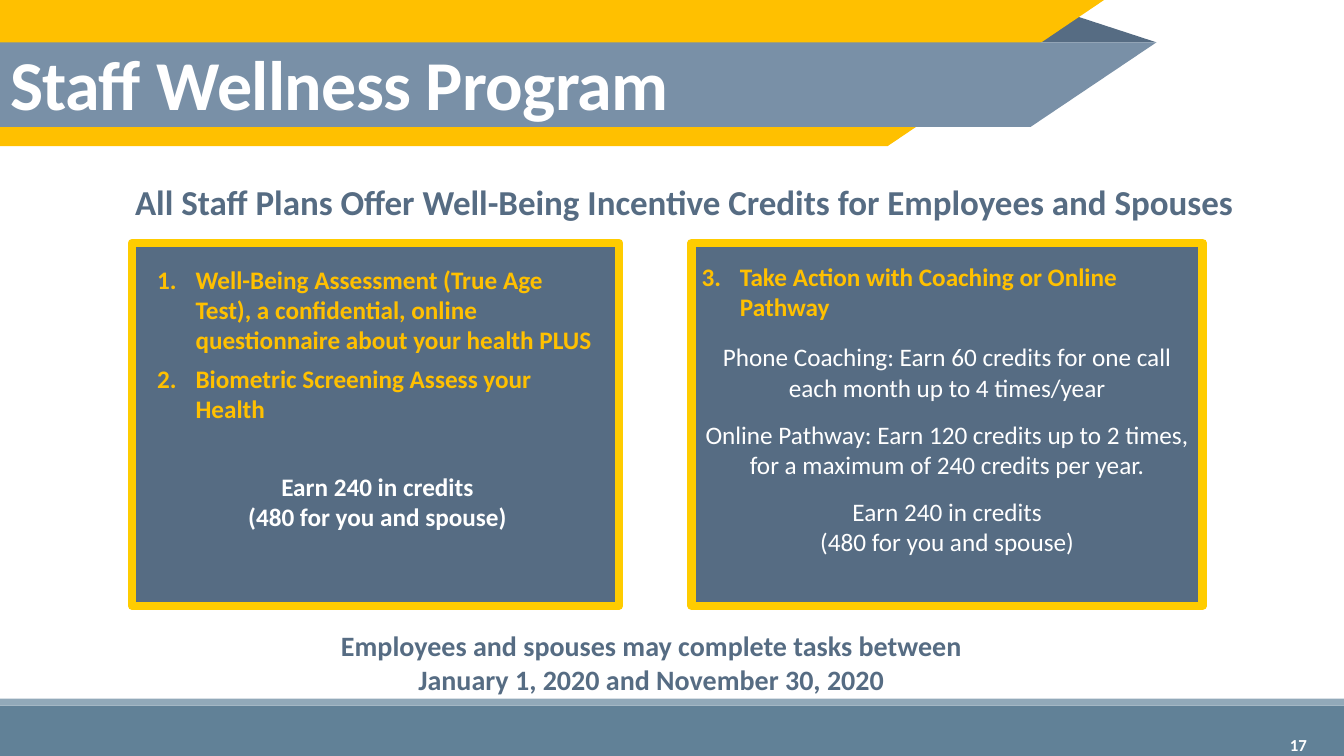
from lxml import etree
from pptx import Presentation
from pptx import util as u
from pptx.dml.color import RGBColor
from pptx.enum import shapes, text
from pptx.oxml import ns

GOLD = RGBColor(0xFF, 0xC0, 0x00)
BORDER = RGBColor(0xFF, 0xCC, 0x00)
NAVY = RGBColor(0x56, 0x6C, 0x83)
SLATE = RGBColor(0x79, 0x90, 0xA7)
FOOTER = RGBColor(0x61, 0x81, 0x97)
FOOTER_EDGE = RGBColor(0x92, 0xA9, 0xB9)
WHITE = RGBColor(0xFF, 0xFF, 0xFF)
LEFT, CENTER, RIGHT = text.PP_ALIGN.LEFT, text.PP_ALIGN.CENTER, text.PP_ALIGN.RIGHT

presentation = Presentation()
presentation.slide_width = u.Inches(13.33)
presentation.slide_height = u.Inches(7.5)
column = presentation.slide_width / 100
row = presentation.slide_height / 100
slide = presentation.slides.add_slide(presentation.slide_layouts[3])
title, left_list, right_panel = slide.placeholders


def place(shape, left, top, width, height):
    """Position a shape in percent of the slide's width and height."""
    shape.left, shape.width = int(left * column), int(width * column)
    shape.top, shape.height = int(top * row), int(height * row)


def write(frame, paragraphs, size, line_spacing=1.0):
    """Fill a frame from (text, colour, bold, alignment, space before, number)."""
    frame.word_wrap = True
    frame.auto_size = text.MSO_AUTO_SIZE.NONE
    frame.text = "\n".join(item[0] for item in paragraphs)
    for paragraph, item in zip(frame.paragraphs, paragraphs):
        _, color, bold, alignment, space, number = item
        properties = paragraph._p.get_or_add_pPr()
        indent = u.Inches(0.38) if number else 0
        properties.set("marL", str(indent))
        properties.set("indent", str(-indent))
        if number:
            bullet = etree.SubElement(properties, ns.qn("a:buAutoNum"), type="arabicPeriod")
            bullet.set("startAt", str(number))
        else:
            etree.SubElement(properties, ns.qn("a:buNone"))
        paragraph.alignment = alignment
        paragraph.line_spacing = line_spacing
        paragraph.space_before = u.Pt(space)
        paragraph.space_after = u.Pt(0)
        for run in paragraph.runs:
            run.font.name = "Calibri"
            run.font.size = u.Pt(size)
            run.font.bold = bold
            run.font.color.rgb = color


# Footer bars and the fold behind the banner
background = [
    (shapes.MSO_SHAPE.RECTANGLE, FOOTER, (0, 93.33, 100, 6.67)),
    (shapes.MSO_SHAPE.RECTANGLE, FOOTER_EDGE, (0, 92.4, 100, 0.93)),
    (shapes.MSO_SHAPE.ISOSCELES_TRIANGLE, NAVY, (76.6, 1.87, 9.45, 3.73)),
    (shapes.MSO_SHAPE.RECTANGLE, NAVY, (9.83, 32.13, 36.23, 48)),
]
for kind, color, bounds in background:
    shape = slide.shapes.add_shape(kind, 0, 0, 0, 0)
    place(shape, *bounds)
    shape.shadow.inherit = False
    shape.fill.solid()
    shape.fill.fore_color.rgb = color
    shape.line.fill.background()
    if kind == shapes.MSO_SHAPE.ISOSCELES_TRIANGLE:
        shape.adjustments[0] = 0.32
left_panel = shape

# Banner bands with slanted right ends: colour, top, bottom, upper and lower right
for color, top, bottom, upper_right, lower_right in [
    (GOLD, 0, 19.33, 82.15, 66.05),
    (SLATE, 5.6, 16.8, 86.05, 76.67),
]:
    outline = slide.shapes.build_freeform(0, int(top * row))
    outline.add_line_segments([
        (int(upper_right * column), int(top * row)),
        (int(lower_right * column), int(bottom * row)),
        (0, int(bottom * row)),
    ])
    band = outline.convert_to_shape()
    band.shadow.inherit = False
    band.fill.solid()
    band.fill.fore_color.rgb = color
    band.line.fill.background()

# Placeholders go in front of the background
for placeholder in (right_panel, left_list, title):
    slide.shapes.element.append(placeholder.element)

place(title, 0, 6.4, 91.6, 14.27)
title.text_frame.vertical_anchor = text.MSO_ANCHOR.TOP
write(title.text_frame, [("Staff Wellness Program", WHITE, True, LEFT, 0, None)], 50, 0.85)
title.text_frame.paragraphs[0].runs[0].font._element.set("spc", "-50")

place(right_panel, 51.46, 32.13, 38.03, 48)
right_panel.fill.solid()
right_panel.fill.fore_color.rgb = NAVY
for panel in (left_panel, right_panel):
    panel.line.color.rgb = BORDER
    panel.line.width = u.Pt(6)

right_panel.text_frame.vertical_anchor = text.MSO_ANCHOR.MIDDLE
right_panel.text_frame.margin_bottom = u.Inches(0.36)
write(right_panel.text_frame, [
    ("Take Action with Coaching or Online Pathway", GOLD, True, LEFT, 0, 3),
    ("Phone Coaching: Earn 60 credits for one call each month up to 4 times/year",
     WHITE, False, CENTER, 14.5, None),
    ("Online Pathway: Earn 120 credits up to 2 times, for a maximum of 240 credits per year.",
     WHITE, False, CENTER, 12, None),
    ("Earn 240 in credits", WHITE, False, CENTER, 12, None),
    ("(480 for you and spouse)", WHITE, False, CENTER, 0, None),
], 18)

place(left_list, 10.95, 34.27, 34.28, 37.07)
write(left_list.text_frame, [
    ("Well-Being Assessment (True Age Test), a confidential, online "
     "questionnaire about your health PLUS", GOLD, True, LEFT, 0, 1),
    ("Biometric Screening Assess your Health", GOLD, True, LEFT, 6, 2),
    ("Earn 240 in credits", WHITE, True, CENTER, 34, None),
    ("(480 for you and spouse)", WHITE, True, CENTER, 0, None),
], 18)
# Both list items share one sequence that starts at 1
for paragraph in left_list.text_frame.paragraphs[:2]:
    del paragraph._p.pPr.find(ns.qn("a:buAutoNum")).attrib["startAt"]

labels = [
    ((5.1, 23.2, 91.6, 6.93), 25, NAVY, CENTER,
     ["All Staff Plans Offer Well-Being Incentive Credits for Employees and Spouses"]),
    ((16.58, 82.53, 63.77, 10.27), 20, NAVY, CENTER,
     ["Employees and spouses may complete tasks between",
      "January 1, 2020 and November 30, 2020"]),
    ((87.25, 97.07, 10.73, 2.93), 12, WHITE, RIGHT, ["17"]),
]
for bounds, size, color, alignment, lines in labels:
    label = slide.shapes.add_textbox(0, 0, 0, 0)
    place(label, *bounds)
    write(label.text_frame, [(line, color, True, alignment, 0, None) for line in lines], size)
page_frame = label.text_frame
page_frame.margin_top = page_frame.margin_bottom = 0
page_frame.vertical_anchor = text.MSO_ANCHOR.MIDDLE

presentation.save("out.pptx")
